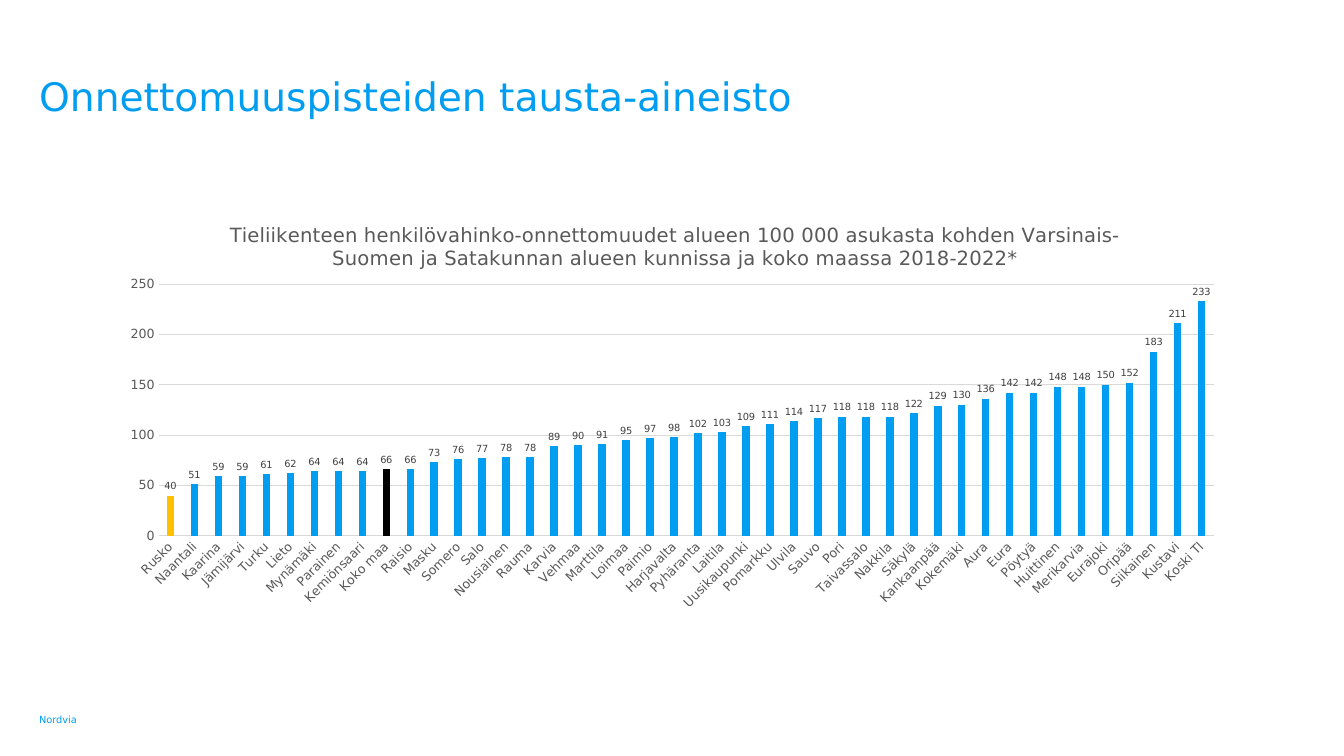
"""Builds a slide with a column chart of road accidents by municipality."""
import pptx
import pptx.util
import pptx.chart.data
import pptx.dml.color
import pptx.enum.chart
import pptx.enum.text
import pptx.oxml

Pt = pptx.util.Pt
FONT = "DejaVu Sans"
COLORS = {"blue": "009DF0", "gold": "FFC000", "black": "000000",
          "gray": "595959", "dark": "404040", "grid": "D9D9D9"}
TEXTS = [
    ("Onnettomuuspisteiden tausta-aineisto", (28, 52, 825, 73), 28, "TOP"),
    ("Nordvia", (28, 501, 61, 17), 7, "BOTTOM"),
]
TITLE = ("Tieliikenteen henkilövahinko-onnettomuudet alueen 100 000 asukasta kohden "
         "Varsinais-Suomen ja Satakunnan alueen kunnissa ja koko maassa 2018-2022*")
BOX = (77, 142, 806, 299.5)
RATES = [
    ("Rusko", 40), ("Naantali", 51), ("Kaarina", 59), ("Jämijärvi", 59),
    ("Turku", 61), ("Lieto", 62), ("Mynämäki", 64), ("Parainen", 64),
    ("Kemiönsaari", 64), ("Koko maa", 66), ("Raisio", 66), ("Masku", 73),
    ("Somero", 76), ("Salo", 77), ("Nousiainen", 78), ("Rauma", 78),
    ("Karvia", 89), ("Vehmaa", 90), ("Marttila", 91), ("Loimaa", 95),
    ("Paimio", 97), ("Harjavalta", 98), ("Pyhäranta", 102), ("Laitila", 103),
    ("Uusikaupunki", 109), ("Pomarkku", 111), ("Ulvila", 114), ("Sauvo", 117),
    ("Pori", 118), ("Taivassalo", 118), ("Nakkila", 118), ("Säkylä", 122),
    ("Kankaanpää", 129), ("Kokemäki", 130), ("Aura", 136), ("Eura", 142),
    ("Pöytyä", 142), ("Huittinen", 148), ("Merikarvia", 148), ("Eurajoki", 150),
    ("Oripää", 152), ("Siikainen", 183), ("Kustavi", 211), ("Koski Tl", 233),
]
ACCENTS = {"Rusko": "gold", "Koko maa": "black"}
PLOT = {"x": 0.045, "y": 0.204, "w": 0.935, "h": 0.6}
HEAD = {"x": 0.105, "y": 0.045}


def rgb(name):
    return pptx.dml.color.RGBColor.from_string(COLORS[name])


def style(font, size, color):
    font.name, font.size, font.bold = FONT, Pt(size), False
    font.color.rgb = rgb(color)


def paint(fill, color):
    fill.solid()
    fill.fore_color.rgb = rgb(color)


def rule(line):
    line.width = Pt(0.75)
    line.color.rgb = rgb("grid")


def add_text(slide, text, box, size, anchor):
    frame = slide.shapes.add_textbox(*map(Pt, box)).text_frame
    frame.word_wrap = True
    frame.margin_left = frame.margin_right = 0
    frame.margin_top = frame.margin_bottom = 0
    frame.vertical_anchor = pptx.enum.text.MSO_ANCHOR[anchor]
    frame.text = text
    style(frame.paragraphs[0].runs[0].font, size, "blue")


def place(node, before, spots, inner=False):
    """Fix the layout of a chart part as fractions of the chart."""
    for old in node.findall(pptx.oxml.ns.qn("c:layout")):
        node.remove(old)
    tags = '<c:layoutTarget val="inner"/>' if inner else ""
    tags += "".join(f'<c:{key}Mode val="edge"/>' for key in "xy")
    tags += "".join(f'<c:{key} val="{val}"/>' for key, val in spots.items())
    space = pptx.oxml.ns.nsdecls("c")
    layout = pptx.oxml.parse_xml(
        f"<c:layout {space}><c:manualLayout>{tags}</c:manualLayout></c:layout>")
    node.insert(before, layout)


def add_chart(slide):
    kinds = pptx.enum.chart
    data = pptx.chart.data.CategoryChartData(number_format="0")
    data.categories = [name for name, _ in RATES]
    data.add_series("Series 1", [rate for _, rate in RATES])
    chart = slide.shapes.add_chart(
        kinds.XL_CHART_TYPE.COLUMN_CLUSTERED, *map(Pt, BOX), data).chart
    style(chart.font, 10, "black")
    chart.has_legend = False

    head = chart.chart_title
    head.text_frame.text = TITLE
    style(head.text_frame.paragraphs[0].runs[0].font, 14, "gray")
    head.include_in_layout = False
    place(head._element, 1, HEAD)
    place(chart._chartSpace.chart.plotArea, 0, PLOT, inner=True)

    for axis in (chart.category_axis, chart.value_axis):
        axis.major_tick_mark = axis.minor_tick_mark = kinds.XL_TICK_MARK.NONE
        style(axis.tick_labels.font, 9, "gray")
    rule(chart.category_axis.format.line)
    turn = chart.category_axis._element.find(".//" + pptx.oxml.ns.qn("a:bodyPr"))
    turn.set("rot", "-2700000")
    turn.set("vert", "horz")
    scale = chart.value_axis
    scale.minimum_scale, scale.maximum_scale, scale.major_unit = 0, 250, 50
    scale.format.line.fill.background()
    rule(scale.major_gridlines.format.line)

    plot = chart.plots[0]
    plot.gap_width, plot.overlap = 219, -27
    plot.vary_by_categories = False
    bars = plot.series[0]
    paint(bars.format.fill, "blue")
    for index, (name, _) in enumerate(RATES):
        if name in ACCENTS:
            paint(bars.points[index].format.fill, ACCENTS[name])
    labels = bars.data_labels
    labels.show_value = True
    labels.number_format, labels.number_format_is_linked = "0", False
    labels.position = kinds.XL_LABEL_POSITION.OUTSIDE_END
    style(labels.font, 7, "dark")


def main():
    deck = pptx.Presentation()
    deck.slide_width, deck.slide_height = Pt(960), Pt(540)
    slide = deck.slides.add_slide(deck.slide_layouts[6])
    for item in TEXTS:
        add_text(slide, *item)
    add_chart(slide)
    deck.save("out.pptx")


if __name__ == "__main__":
    main()
